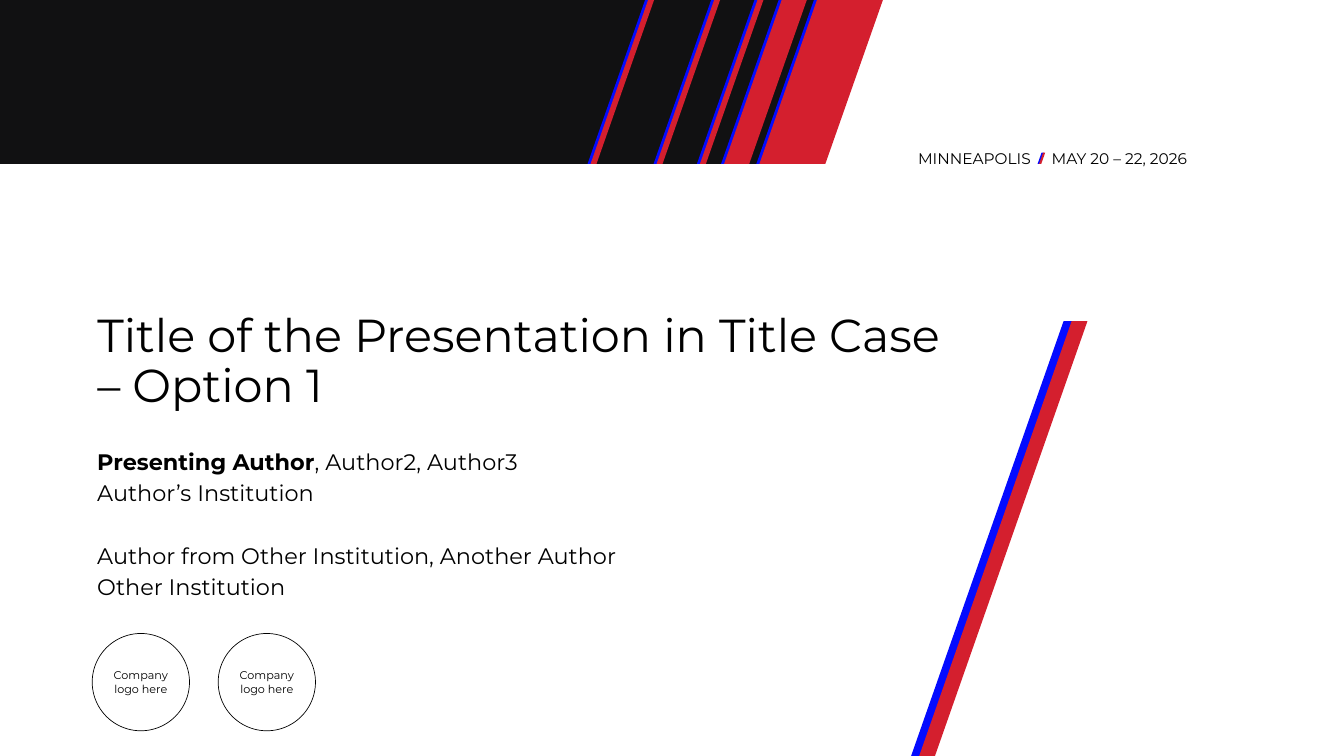
from pptx import Presentation
from pptx.dml.color import RGBColor
from pptx.enum.shapes import MSO_SHAPE as Shape
from pptx.enum.text import MSO_ANCHOR as Anchor, MSO_AUTO_SIZE as AutoSize, PP_ALIGN as Align
from pptx.util import Pt

BLACK = RGBColor(0x00, 0x00, 0x00)
WHITE = RGBColor(0xFF, 0xFF, 0xFF)
CHARCOAL = RGBColor(0x11, 0x11, 0x12)
BLUE = RGBColor(0x04, 0x0B, 0xFF)
RED = RGBColor(0xD4, 0x1F, 0x2E)

FONT = "Montserrat"
TITLE_ONLY = 5
HEADER_HEIGHT = 234
HEADER_SLANT = 82.2
STRIPE_WIDTH = 90.72
# Left edge of each header stripe and the width of its red part
HEADER_STRIPES = [
    (839.5, STRIPE_WIDTH),
    (933.84, STRIPE_WIDTH),
    (995.76, STRIPE_WIDTH),
    (1030.32, 118.08),
    (1080.72, 176.4),
]
# Bold part, regular part and space before
AUTHOR_LINES = [
    ("Presenting Author", ", Author2, Author3", 0),
    ("", "Author’s Institution", 10),
    ("", "Author from Other Institution, Another Author", 55),
    ("", "Other Institution", 10),
]


def set_font(para, size):
    para.font.name = FONT
    para.font.size = Pt(size)
    para.font.color.rgb = BLACK


def add_filled(slide, kind, left, top, width, height, color):
    shape = slide.shapes.add_shape(kind, Pt(left), Pt(top), Pt(width), Pt(height))
    shape.shadow.inherit = False
    shape.fill.solid()
    shape.fill.fore_color.rgb = color
    shape.line.fill.background()
    return shape


def add_stripe(slide, left, top, blue_width, red_width, height, slant, shift):
    """Add a blue slanted bar with a red one laid over it, shifted to the right."""
    bars = [(left, blue_width, BLUE), (left + shift, red_width, RED)]
    for bar_left, width, color in bars:
        bar = add_filled(slide, Shape.PARALLELOGRAM, bar_left, top, width, height, color)
        bar.adjustments[0] = slant / min(width, height)


def add_text_box(slide, left, top, width, height):
    box = slide.shapes.add_textbox(Pt(left), Pt(top), Pt(width), Pt(height))
    box.text_frame.word_wrap = True
    return box.text_frame


def add_label(slide, text, left, width):
    para = add_text_box(slide, left, 209.5, width, 33.84).paragraphs[0]
    para.text = text
    set_font(para, 22)


def add_header(slide):
    add_filled(slide, Shape.RECTANGLE, 0, 0, 1171.44, HEADER_HEIGHT, CHARCOAL)
    for left, red_width in HEADER_STRIPES:
        add_stripe(slide, left, 0, STRIPE_WIDTH, red_width,
                   HEADER_HEIGHT, HEADER_SLANT, 4.32)
    add_label(slide, "MINNEAPOLIS", 1304.64, 182.16)
    add_label(slide, "MAY 20 – 22, 2026", 1495.44, 221.76)
    add_stripe(slide, 1482.5, 218.16, 8.64, 8.64, 15.84, 5.6, 2.16)


def add_title(slide, text):
    title = slide.shapes.title
    title.left, title.top = Pt(131.76), Pt(383.76)
    title.width, title.height = Pt(1250.64), Pt(208.8)
    frame = title.text_frame
    frame.text = text
    frame.word_wrap = True
    frame.auto_size = AutoSize.NONE
    frame.vertical_anchor = Anchor.BOTTOM
    para = frame.paragraphs[0]
    para.alignment = Align.LEFT
    para.line_spacing = 0.9
    set_font(para, 66)


def add_authors(slide):
    frame = add_text_box(slide, 131.76, 640.8, 1250.64, 232.56)
    for index, (bold, regular, space) in enumerate(AUTHOR_LINES):
        para = frame.add_paragraph() if index else frame.paragraphs[0]
        para.line_spacing = 0.9
        para.space_before = Pt(space)
        set_font(para, 32)
        if bold:
            span = para.add_run()
            span.text = bold
            span.font.bold = True
        para.add_run().text = regular


def add_logo_circle(slide, left):
    circle = add_filled(slide, Shape.OVAL, left, 905, 139, 139, WHITE)
    circle.line.color.rgb = BLACK
    circle.line.width = Pt(1)
    frame = circle.text_frame
    frame.word_wrap = True
    frame.vertical_anchor = Anchor.MIDDLE
    para = frame.paragraphs[0]
    para.text = "Company logo here"
    para.alignment = Align.CENTER
    set_font(para, 16)


def main():
    deck = Presentation()
    deck.slide_width, deck.slide_height = Pt(1920.24), Pt(1080)
    page = deck.slides.add_slide(deck.slide_layouts[TITLE_ONLY])
    add_header(page)
    add_stripe(page, 1301.76, 458.64, 240.48, 240.48, 621.36, 217.9, 11.52)
    for left in (131.76, 311.76):
        add_logo_circle(page, left)
    add_title(page, "Title of the Presentation in Title Case – Option 1")
    add_authors(page)
    deck.save("out.pptx")


if __name__ == "__main__":
    main()
